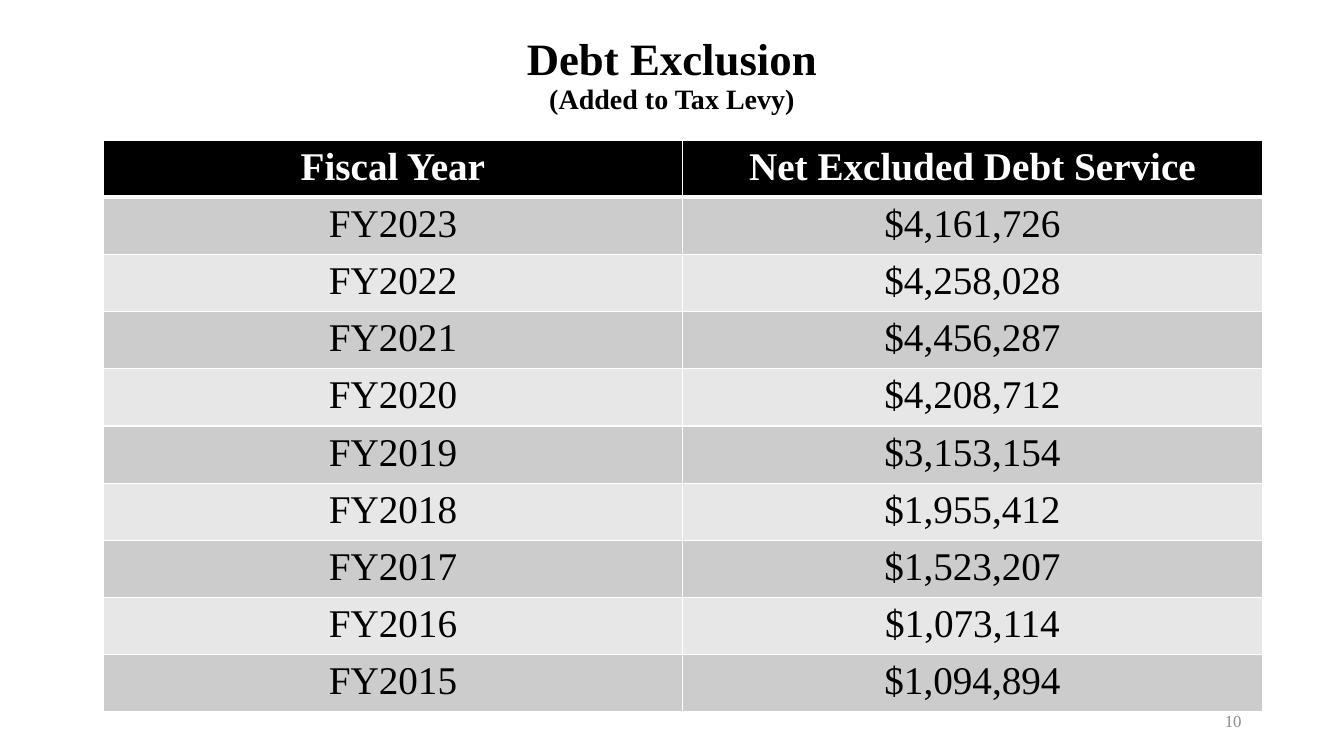
import pptx
import pptx.dml.color
import pptx.enum.text
import pptx.oxml
import pptx.oxml.ns
import pptx.util
from pptx.util import Cm

ALIGN = pptx.enum.text.PP_ALIGN
MIDDLE = pptx.enum.text.MSO_ANCHOR.MIDDLE

DEBT_SERVICE = [
    ("Fiscal Year", "Net Excluded Debt Service"),
    ("FY2023", "$4,161,726"),
    ("FY2022", "$4,258,028"),
    ("FY2021", "$4,456,287"),
    ("FY2020", "$4,208,712"),
    ("FY2019", "$3,153,154"),
    ("FY2018", "$1,955,412"),
    ("FY2017", "$1,523,207"),
    ("FY2016", "$1,073,114"),
    ("FY2015", "$1,094,894"),
]


class SlideBuilder:
    font = "Times New Roman"
    colors = {
        "black": "000000",
        "white": "FFFFFF",
        "dark_band": "CCCCCC",
        "light_band": "E7E7E7",
        "muted": "8C8C8C",
    }

    def __init__(self, s):
        self.s = s

    def rgb(self, color):
        return pptx.dml.color.RGBColor.from_string(self.colors[color])

    def format(self, p, sizes, color, bold=False, align=ALIGN.CENTER):
        """Style a paragraph, with one size for each of its runs."""
        p.alignment = align
        for r, size in zip(p.runs, sizes):
            r.font.name = self.font
            r.font.size = pptx.util.Pt(size)
            r.font.bold = bold
            r.font.color.rgb = self.rgb(color)

    def text(self, text, left, top, width, height, sizes, color, spacing=1.0, **style):
        sp = self.s.shapes.add_textbox(Cm(left), Cm(top), Cm(width), Cm(height))
        tf = sp.text_frame
        tf.word_wrap = True
        tf.vertical_anchor = MIDDLE
        p = tf.paragraphs[0]
        p.text = text
        p.line_spacing = spacing
        self.format(p, sizes, color, **style)

    def border(self, cell, side, points):
        ns = pptx.oxml.ns.nsdecls("a")
        width = pptx.util.Pt(points)
        cell._tc.get_or_add_tcPr().append(pptx.oxml.parse_xml(
            f'<a:{side} {ns} w="{width}"><a:solidFill>'
            f'<a:srgbClr val="{self.colors["white"]}"/></a:solidFill></a:{side}>'))

    def table(self, rows, left, top, width, row_height, size):
        table = self.s.shapes.add_table(
            len(rows), len(rows[0]), Cm(left), Cm(top),
            Cm(width), Cm(row_height * len(rows))).table
        for i, row in enumerate(rows):
            header = i == 0
            band = "dark_band" if i % 2 else "light_band"
            for j, value in enumerate(row):
                cell = table.cell(i, j)
                cell.text_frame.text = value
                self.format(cell.text_frame.paragraphs[0], [size],
                            "white" if header else "black", bold=header)
                for side in ("lnL", "lnR", "lnT", "lnB"):
                    thick = (i, side) in ((0, "lnB"), (1, "lnT"))
                    self.border(cell, side, 3 if thick else 1)
                cell.fill.solid()
                cell.fill.fore_color.rgb = self.rgb("black" if header else band)


def main():
    prs = pptx.Presentation()
    prs.slide_width, prs.slide_height = Cm(33.87), Cm(19.05)
    slide = SlideBuilder(prs.slides.add_slide(prs.slide_layouts[6]))
    slide.text("Debt Exclusion\v(Added to Tax Levy)", 2.33, 0.53, 29.21, 2.77,
               [32, 20], "black", spacing=0.9, bold=True)
    slide.table(DEBT_SERVICE, 2.6, 3.53, 29.21, 1.35, 28)
    slide.text("10", 23.92, 17.66, 7.62, 1.01, [12], "muted", align=ALIGN.RIGHT)
    prs.save("out.pptx")


if __name__ == "__main__":
    main()
